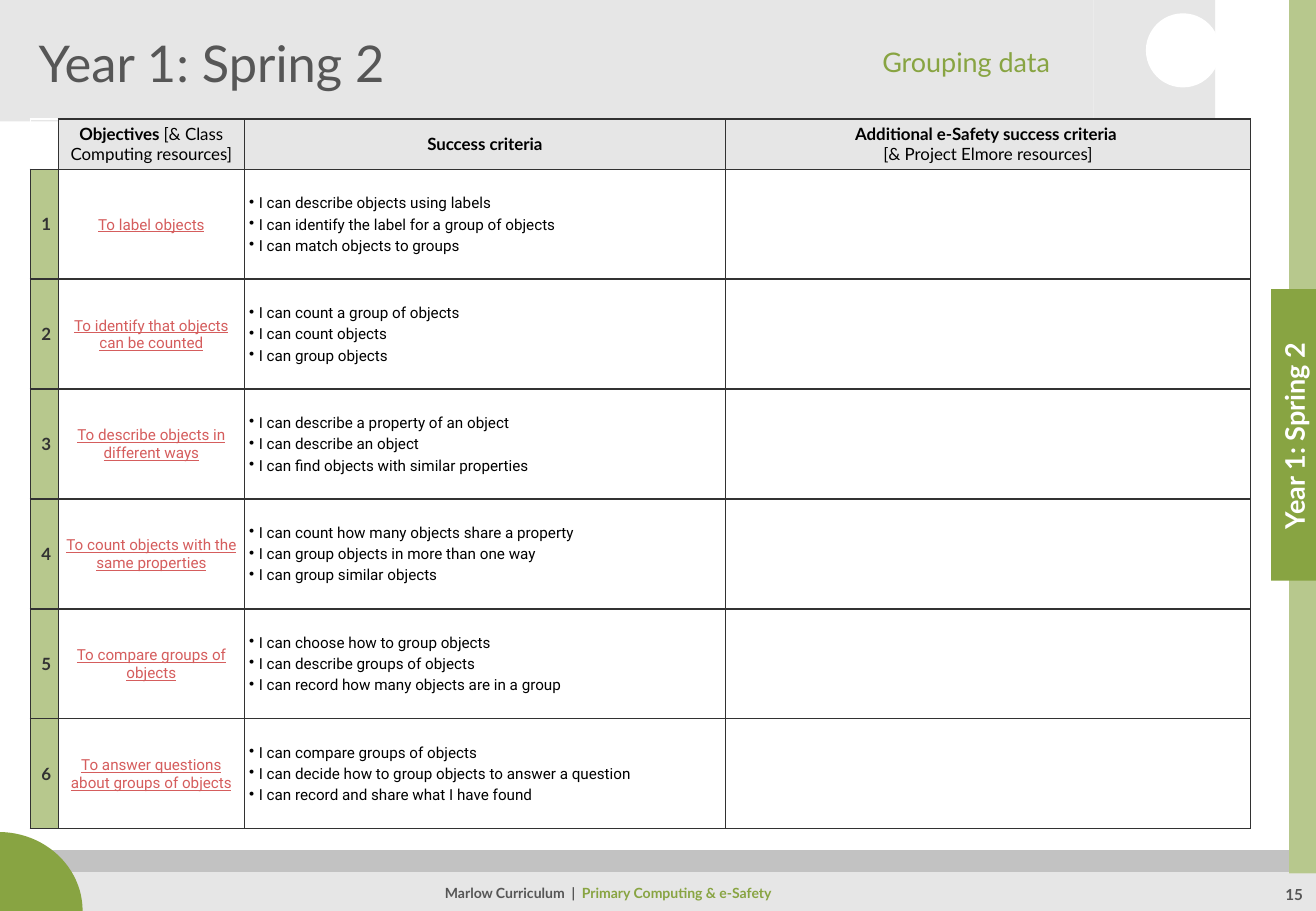
from lxml.etree import SubElement
from pptx import Presentation
from pptx.dml.color import RGBColor
from pptx.enum.shapes import MSO_CONNECTOR, MSO_SHAPE
from pptx.enum.text import MSO_ANCHOR, PP_ALIGN
from pptx.oxml import parse_xml
from pptx.oxml.ns import nsdecls, qn
from pptx.util import Inches, Pt

COLOURS = {
    "white": "FFFFFF", "black": "000000", "frame": "C2C2C2", "panel": "E6E6E6",
    "green": "88A442", "grey": "565656", "ink": "323232", "link": "D55D5D",
}
LESSONS = [
    ("To label objects",
     ["I can describe objects using labels",
      "I can identify the label for a group of objects",
      "I can match objects to groups"]),
    ("To identify that objects can be counted",
     ["I can count a group of objects",
      "I can count objects",
      "I can group objects"]),
    ("To describe objects in different ways",
     ["I can describe a property of an object",
      "I can describe an object",
      "I can find objects with similar properties"]),
    ("To count objects with the same properties",
     ["I can count how many objects share a property",
      "I can group objects in more than one way",
      "I can group similar objects"]),
    ("To compare groups of objects",
     ["I can choose how to group objects",
      "I can describe groups of objects",
      "I can record how many objects are in a group"]),
    ("To answer questions about groups of objects",
     ["I can compare groups of objects",
      "I can decide how to group objects to answer a question",
      "I can record and share what I have found"]),
]


class CurriculumSlide:
    heading_font = "Lato"
    body_font = "Roboto"

    def __init__(self, slide):
        self.slide = slide

    def colour(self, name):
        return RGBColor.from_string(COLOURS[name])

    def paint(self, fill, element, name, opacity=100):
        fill.solid()
        fill.fore_color.rgb = self.colour(name)
        if opacity < 100:
            tint = element.find(".//" + qn("a:srgbClr"))
            SubElement(tint, qn("a:alpha"), val=str(opacity * 1000))

    def finish(self, shape, name, opacity=100):
        shape.shadow.inherit = False
        shape.line.fill.background()
        self.paint(shape.fill, shape._element, name, opacity)

    def block(self, kind, left, top, width, height, name, opacity=100):
        shape = self.slide.shapes.add_shape(
            kind, Inches(left), Inches(top), Inches(width), Inches(height))
        self.finish(shape, name, opacity)

    def outline(self, contours, name):
        builder = self.slide.shapes.build_freeform(*contours[0][0], scale=Inches(1))
        builder.add_line_segments(contours[0][1:])
        for contour in contours[1:]:
            builder.move_to(*contour[0])
            builder.add_line_segments(contour[1:])
        self.finish(builder.convert_to_shape(), name)

    def rule(self, x1, y1, x2, y2, name, weight):
        line = self.slide.shapes.add_connector(
            MSO_CONNECTOR.STRAIGHT, Inches(x1), Inches(y1), Inches(x2), Inches(y2))
        line.line.color.rgb = self.colour(name)
        line.line.width = Pt(weight)
        SubElement(line._element.spPr, qn("a:effectLst"))

    def run(self, paragraph, text, size, name, bold=False, font=None, underline=False):
        run = paragraph.add_run()
        run.text = text
        run.font.name = font or self.heading_font
        run.font.size = Pt(size)
        run.font.color.rgb = self.colour(name)
        run.font.bold = bold
        run.font.underline = underline

    def label(self, left, top, width, height, runs, size, align,
              anchor=MSO_ANCHOR.MIDDLE, bold=False, rotation=0, spacing=None):
        box = self.slide.shapes.add_textbox(
            Inches(left), Inches(top), Inches(width), Inches(height))
        box.rotation = rotation
        frame = box.text_frame
        frame.word_wrap = True
        frame.vertical_anchor = anchor
        paragraph = frame.paragraphs[0]
        paragraph.alignment = align
        paragraph.line_spacing = spacing
        for text, name in runs:
            self.run(paragraph, text, size, name, bold)

    def grid(self, left, top, widths, heights):
        frame = self.slide.shapes.add_table(
            len(heights), len(widths), Inches(left), Inches(top),
            Inches(sum(widths)), Inches(sum(heights)))
        table = frame.table
        table.first_row = table.horz_banding = False
        for column, width in zip(table.columns, widths):
            column.width = Inches(width)
        for row, height in zip(table.rows, heights):
            row.height = Inches(height)
        return table

    def cell(self, cell, name=None, opacity=100, margins=(0.04, 0.01, 0.04, 0), sides="LRTB"):
        properties = cell._tc.get_or_add_tcPr()
        if name:
            self.paint(cell.fill, properties, name, opacity)
        else:
            cell.fill.background()
        for position, side in enumerate(sides):
            properties.insert(position, parse_xml(
                f'<a:ln{side} {nsdecls("a")} w="12700"><a:solidFill>'
                f'<a:srgbClr val="{COLOURS["ink"]}"/></a:solidFill></a:ln{side}>'))
        cell.vertical_anchor = MSO_ANCHOR.MIDDLE
        (cell.margin_left, cell.margin_top,
         cell.margin_right, cell.margin_bottom) = map(Inches, margins)
        paragraph = cell.text_frame.paragraphs[0]
        paragraph.alignment = PP_ALIGN.CENTER
        return paragraph

    def bullets(self, cell, items):
        first = self.cell(cell, "white")
        for index, item in enumerate(items):
            paragraph = cell.text_frame.add_paragraph() if index else first
            paragraph.alignment = PP_ALIGN.LEFT
            properties = paragraph._p.get_or_add_pPr()
            properties.set("marL", str(Inches(0.08)))
            properties.set("indent", str(-Inches(0.08)))
            SubElement(properties, qn("a:buChar"), char="•")
            paragraph.space_after = Pt(2)
            self.run(paragraph, item, 9, "black", font=self.body_font)


def draw_background(page):
    page.outline([
        [(0, 0), (10.85, 0), (10.85, 7.5), (0, 7.5), (0, 0)],
        [(0.1, 0.1), (0.1, 7.41), (10.73, 7.41), (10.73, 0.1), (0.1, 0.1)],
    ], "frame")
    page.block(MSO_SHAPE.RECTANGLE, 0.32, 7.18, 10.53, 0.33, "panel")
    page.rule(0.05, 7.13, 10.83, 7.13, "frame", 7)
    page.block(MSO_SHAPE.ARC, -0.7, 6.85, 1.38, 1.3, "green")
    page.label(2.05, 7.21, 5.91, 0.3,
               [("Marlow Curriculum  |  ", "grey"), ("Primary Computing & e-Safety", "green")],
               8.3, PP_ALIGN.CENTER, bold=True, spacing=0.9)
    page.outline([[(-0.02, 0.2), (-0.01, 0.81), (8.87, 0.81), (8.77, 0.21), (-0.02, 0.2)]], "panel")
    for name, opacity in (("white", 100), ("green", 60)):
        page.block(MSO_SHAPE.RECTANGLE, 10.61, -0.01, 0.24, 7.2, name, opacity)
    page.block(MSO_SHAPE.RECTANGLE, 10.46, 2.38, 0.39, 2.4, "green")
    page.label(10.33, 7.21, 0.64, 0.28, [("15", "grey")], 9, PP_ALIGN.CENTER,
               MSO_ANCHOR.TOP, bold=True, spacing=1.2)
    page.outline([[(9.14, 0.8), (10.3, 0.8), (10.28, -0.01), (9.17, -0.02), (9.14, 0.8)]], "panel")
    page.block(MSO_SHAPE.OVAL, 9.43, 0.11, 0.61, 0.61, "white")


def draw_lessons(page):
    row_height = 5.43 / len(LESSONS)
    table = page.grid(0.25, 0.98, [0.23, 1.53, 3.96, 4.32], [0.41] + [row_height] * len(LESSONS))
    page.cell(table.cell(0, 0), sides="RB")
    headings = [
        ("Objectives ", "[& Class Computing resources]", False),
        ("Success criteria", "", False),
        ("Additional e-Safety success criteria ", "[& Project Elmore resources]", True),
    ]
    for column, (title, resources, split) in enumerate(headings, 1):
        heading = page.cell(table.cell(0, column), "panel", margins=(0.04,) * 4)
        page.run(heading, title, 10, "black", bold=True)
        if split:
            heading.add_line_break()
        if resources:
            page.run(heading, resources, 10, "black")
    for number, (objective, criteria) in enumerate(LESSONS, 1):
        counter = page.cell(table.cell(number, 0), "green", 60, margins=(0.07, 0.05, 0.04, 0.05))
        page.run(counter, str(number), 10, "ink", bold=True)
        goal = page.cell(table.cell(number, 1), "white")
        goal.space_after = Pt(2)
        page.run(goal, objective, 9, "link", font=page.body_font, underline=True)
        page.bullets(table.cell(number, 2), criteria)
        page.cell(table.cell(number, 3), "white")


def main():
    deck = Presentation()
    deck.slide_width, deck.slide_height = Inches(10.83), Inches(7.5)
    page = CurriculumSlide(deck.slides.add_slide(deck.slide_layouts[6]))
    draw_background(page)
    term = "Year 1: Spring 2"
    page.label(0.22, 0.26, 8.42, 0.5, [(term, "grey")], 30, PP_ALIGN.LEFT)
    page.label(9.46, 3.42, 2.38, 0.34, [(term, "white")], 16, PP_ALIGN.CENTER,
               bold=True, rotation=270)
    page.label(3.73, 0.26, 5.01, 0.5, [("Grouping data", "green")], 16, PP_ALIGN.RIGHT)
    draw_lessons(page)
    deck.save("out.pptx")


if __name__ == "__main__":
    main()
